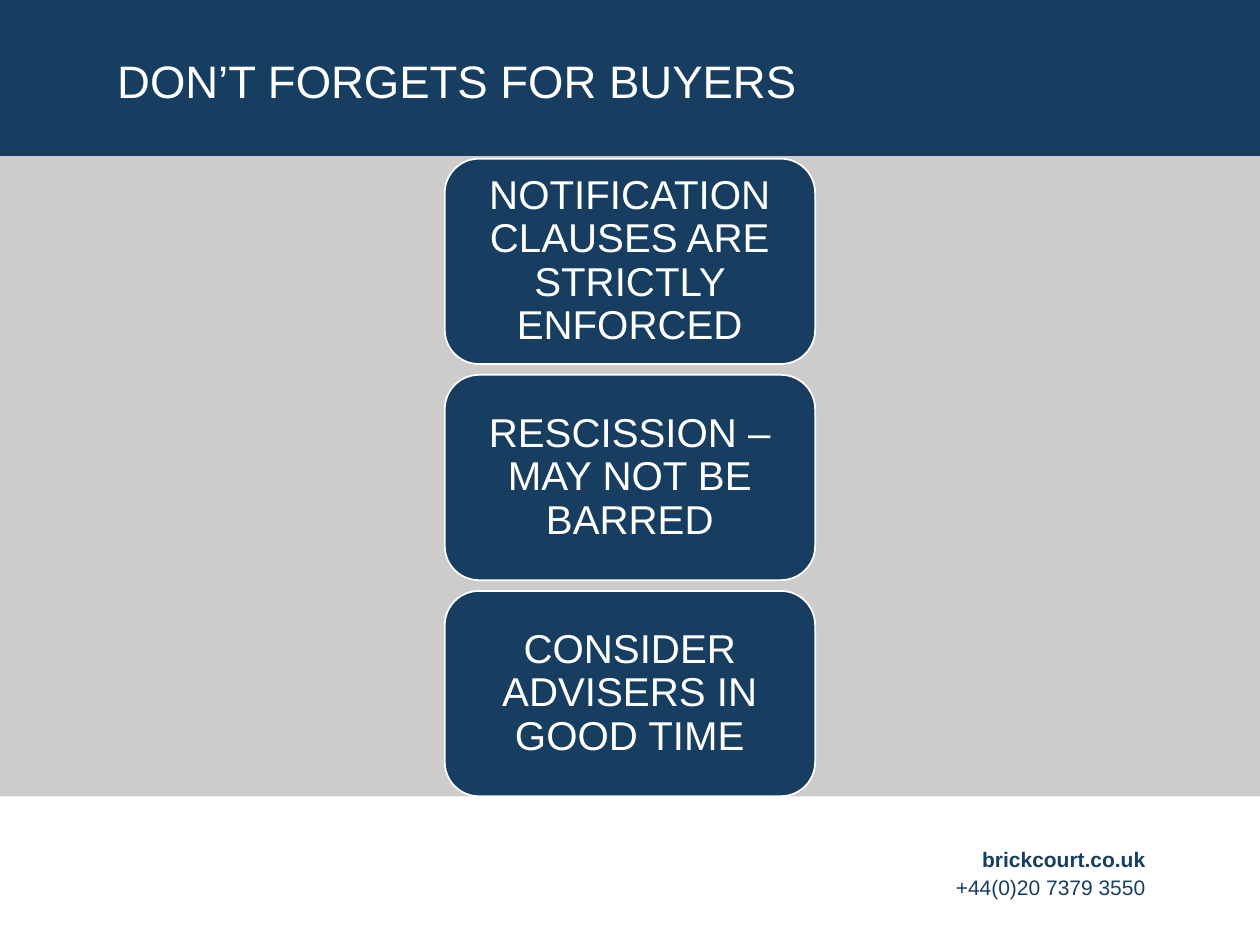
import pptx
import pptx.util
import pptx.dml.color
import pptx.enum.shapes
import pptx.enum.text
from dataclasses import dataclass

Inches = pptx.util.Inches
Pt = pptx.util.Pt
ALIGN = pptx.enum.text.PP_ALIGN
SHAPE = pptx.enum.shapes.MSO_SHAPE


@dataclass
class Theme:
    navy: str = "173E61"
    grey: str = "CECCCB"
    white: str = "FFFFFF"
    font: str = "Arial"
    title: int = 26
    card: int = 23
    footer: int = 12


theme = Theme()


def rgb(value):
    return pptx.dml.color.RGBColor.from_string(value)


def write(p, text, size, color, align=ALIGN.LEFT, spacing=0.9, bold=False):
    p.alignment = align
    p.line_spacing = spacing
    p.space_before = Pt(0)
    r = p.add_run()
    r.text = text
    r.font.name = theme.font
    r.font.size = Pt(size)
    r.font.bold = bold
    r.font.color.rgb = rgb(color)


prs = pptx.Presentation()
prs.slide_width = Inches(10)
prs.slide_height = Inches(7.5)
s = prs.slides.add_slide(prs.slide_layouts[5])

header_height = 1.24
for top, height, color in [(header_height, 5.08, theme.grey), (0, header_height, theme.navy)]:
    band = s.shapes.add_shape(SHAPE.RECTANGLE, 0, Inches(top), prs.slide_width, Inches(height))
    band.shadow.inherit = False
    band.fill.solid()
    band.fill.fore_color.rgb = rgb(color)
    band.line.fill.background()

footer = s.shapes.add_textbox(Inches(5.81), Inches(6.72), Inches(3.38), Inches(0.4))
tf = footer.text_frame
tf.word_wrap = True
tf.vertical_anchor = pptx.enum.text.MSO_ANCHOR.MIDDLE
footer_style = dict(size=theme.footer, color=theme.navy, align=ALIGN.RIGHT, spacing=Pt(16))
write(tf.paragraphs[0], "brickcourt.co.uk", bold=True, **footer_style)
write(tf.add_paragraph(), "+44(0)20 7379 3550", **footer_style)

title = s.shapes.title
title.element.getparent().append(title.element)
title.left, title.top = Inches(0.93), Inches(0.4)
title.width, title.height = Inches(8.13), Inches(0.53)
tf = title.text_frame
tf.margin_left = tf.margin_right = tf.margin_top = tf.margin_bottom = 0
tf.auto_size = pptx.enum.text.MSO_AUTO_SIZE.NONE
tf.vertical_anchor = pptx.enum.text.MSO_ANCHOR.MIDDLE
write(tf.paragraphs[0], "DON’T FORGETS FOR BUYERS", theme.title, theme.white)

reminders = [
    "NOTIFICATION CLAUSES ARE STRICTLY ENFORCED",
    "RESCISSION – MAY NOT BE BARRED",
    "CONSIDER ADVISERS IN GOOD TIME",
]
card_width, card_height = 2.94, 1.63
first_top, last_top = 1.26, 4.69
pitch = (last_top - first_top) / (len(reminders) - 1)
for i, reminder in enumerate(reminders):
    card = s.shapes.add_shape(
        SHAPE.ROUNDED_RECTANGLE,
        Inches((10 - card_width) / 2), Inches(first_top + i * pitch),
        Inches(card_width), Inches(card_height),
    )
    card.shadow.inherit = False
    card.fill.solid()
    card.fill.fore_color.rgb = rgb(theme.navy)
    card.line.color.rgb = rgb(theme.white)
    card.line.width = Pt(1)
    tf = card.text_frame
    tf.word_wrap = True
    tf.vertical_anchor = pptx.enum.text.MSO_ANCHOR.MIDDLE
    write(tf.paragraphs[0], reminder, theme.card, theme.white, align=ALIGN.CENTER)

prs.save("out.pptx")
